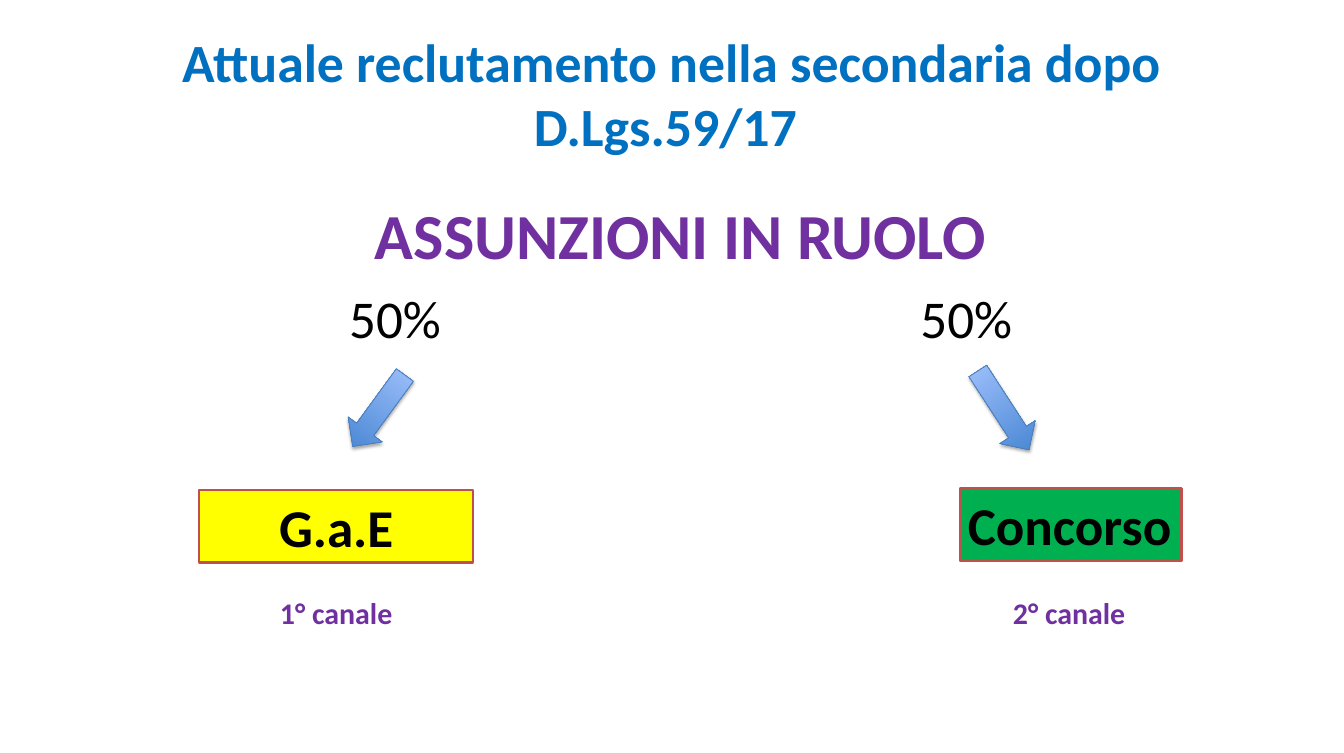
from lxml import etree
from pptx import Presentation
from pptx.dml.color import RGBColor
from pptx.enum.shapes import MSO_SHAPE
from pptx.enum.text import MSO_ANCHOR, PP_ALIGN
from pptx.oxml.ns import qn
from pptx.util import Inches, Pt

RECTANGLE, DOWN_ARROW = MSO_SHAPE.RECTANGLE, MSO_SHAPE.DOWN_ARROW
LEFT, CENTER = PP_ALIGN.LEFT, PP_ALIGN.CENTER
TOP, MIDDLE = MSO_ANCHOR.TOP, MSO_ANCHOR.MIDDLE

BLUE = RGBColor(0x00, 0x70, 0xC0)
PURPLE = RGBColor(0x70, 0x30, 0xA0)
BLACK = RGBColor(0x00, 0x00, 0x00)
YELLOW = RGBColor(0xFF, 0xFF, 0x00)
GREEN = RGBColor(0x00, 0xB0, 0x50)
RED = RGBColor(0xC0, 0x50, 0x4D)
ARROW_DARK = RGBColor(0x3F, 0x80, 0xCE)
ARROW_LIGHT = RGBColor(0xA4, 0xC4, 0xFF)
ARROW_LINE = RGBColor(0x4B, 0x7E, 0xBC)

# Boxes are (left, top, width, height) in inches.
# The line break in the title is a vertical tab.
TITLE = ("Attuale reclutamento nella secondaria dopo\vD.Lgs.59/17 ", (0.84, 0.38, 15.18, 1.57))
HEADING = ("ASSUNZIONI IN RUOLO", (1.07, 2.4, 14.95, 1.14))
CHANNELS = [
    {
        "share": ("50%", (3.96, 3.53, 2, 0.91)),
        "arrow": ((4.49, 4.6, 0.53, 1.11), 36.2),
        "source": ("G.a.E", (2.5, 6.15, 3.44, 0.91), YELLOW, CENTER, True),
        "label": ("1° canale", (1.64, 7.41, 5.16, 0.56)),
    },
    {
        "share": ("50%", (11.13, 3.53, 2, 0.91)),
        "arrow": ((12.33, 4.56, 0.53, 1.18), 327),
        "source": ("Concorso", (12.05, 6.13, 2.78, 0.91), GREEN, LEFT, False),
        "label": ("2° canale", (10.84, 7.41, 5.16, 0.56)),
    },
]


def write(shape, text, size, color, bold=True, align=CENTER, anchor=TOP, wrap=True):
    frame = shape.text_frame
    frame.word_wrap = wrap
    frame.vertical_anchor = anchor
    paragraph = frame.paragraphs[0]
    paragraph.text = text
    paragraph.alignment = align
    font = paragraph.font
    font.name, font.size, font.bold = "Calibri", Pt(size), bold
    font.color.rgb = color


def add_text(slide, text, box, size, color, **style):
    textbox = slide.shapes.add_textbox(*map(Inches, box))
    write(textbox, text, size, color, **style)


def add_shadow(shape):
    """Give the shape a soft shadow straight below it."""
    shape.shadow.inherit = False
    effects = shape.element.spPr.find(qn("a:effectLst"))
    shadow = etree.SubElement(
        effects, qn("a:outerShdw"), blurRad=str(Pt(3.1)), dist=str(Pt(1.8)),
        dir="5400000", rotWithShape="0")
    color = etree.SubElement(shadow, qn("a:srgbClr"), val="000000")
    etree.SubElement(color, qn("a:alpha"), val="35000")


def add_arrow(slide, box, rotation):
    arrow = slide.shapes.add_shape(DOWN_ARROW, *map(Inches, box))
    arrow.rotation = rotation
    arrow.fill.gradient()
    arrow.fill.gradient_angle = 90
    for stop, position, color in zip(
            arrow.fill.gradient_stops, (0, 1), (ARROW_DARK, ARROW_LIGHT)):
        stop.position = position
        stop.color.rgb = color
    arrow.line.color.rgb = ARROW_LINE
    arrow.line.width = Pt(0.75)
    add_shadow(arrow)


def add_source(slide, text, box, fill, align, wrap):
    source = slide.shapes.add_shape(RECTANGLE, *map(Inches, box))
    source.shadow.inherit = False
    source.fill.solid()
    source.fill.fore_color.rgb = fill
    source.line.color.rgb = RED
    source.line.width = Pt(2)
    write(source, text, 48, BLACK, align=align, anchor=MIDDLE, wrap=wrap)


def main():
    presentation = Presentation()
    presentation.slide_width = Inches(16.87)
    presentation.slide_height = Inches(9.45)
    slide = presentation.slides.add_slide(presentation.slide_layouts[6])

    add_text(slide, *TITLE, 48.6, BLUE, anchor=MIDDLE)
    add_text(slide, *HEADING, 58, PURPLE)
    for channel in CHANNELS:
        add_text(slide, *channel["share"], 48, BLACK, bold=False)
        add_arrow(slide, *channel["arrow"])
        add_source(slide, *channel["source"])
        add_text(slide, *channel["label"], 27, PURPLE)

    presentation.save("out.pptx")


if __name__ == "__main__":
    main()
